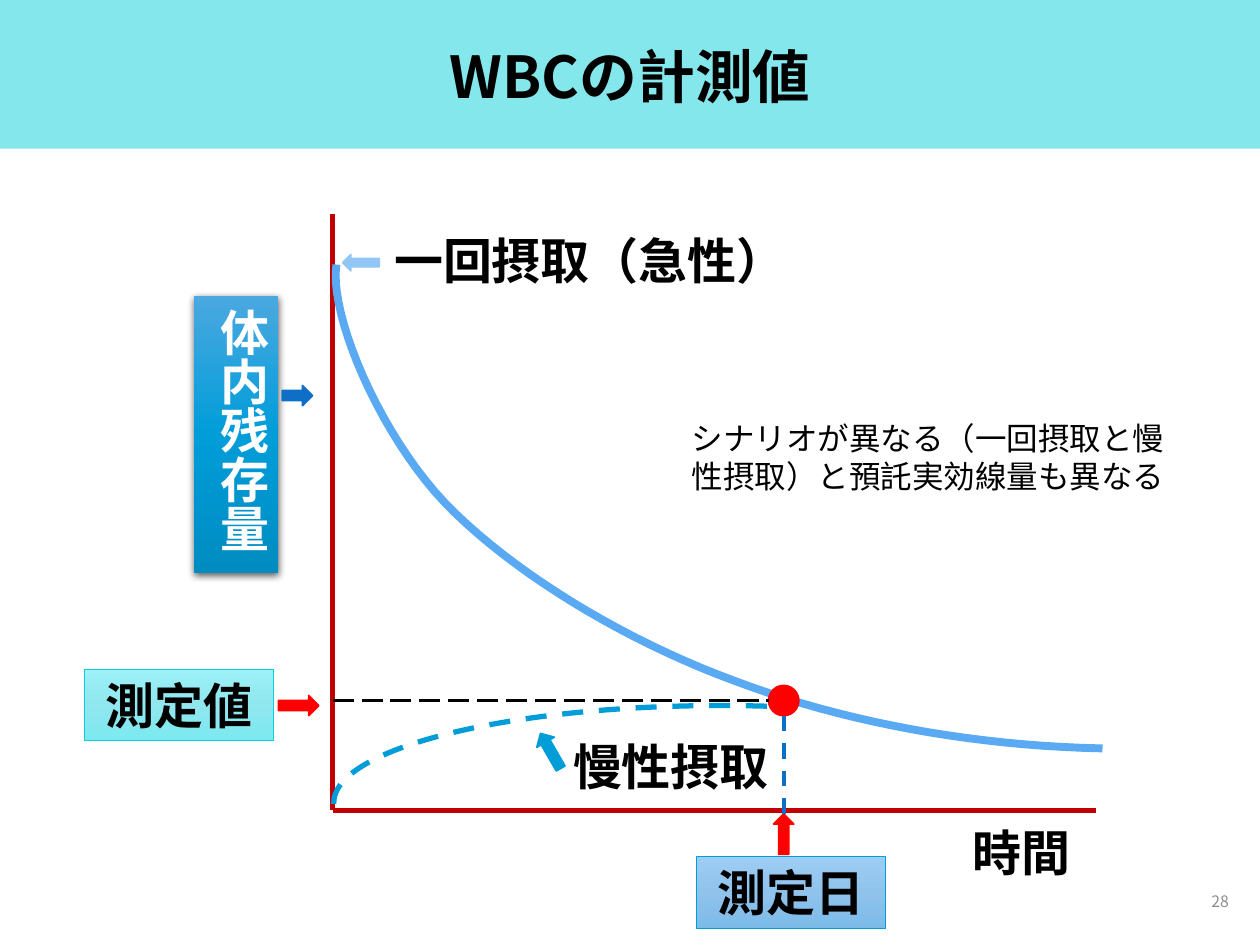
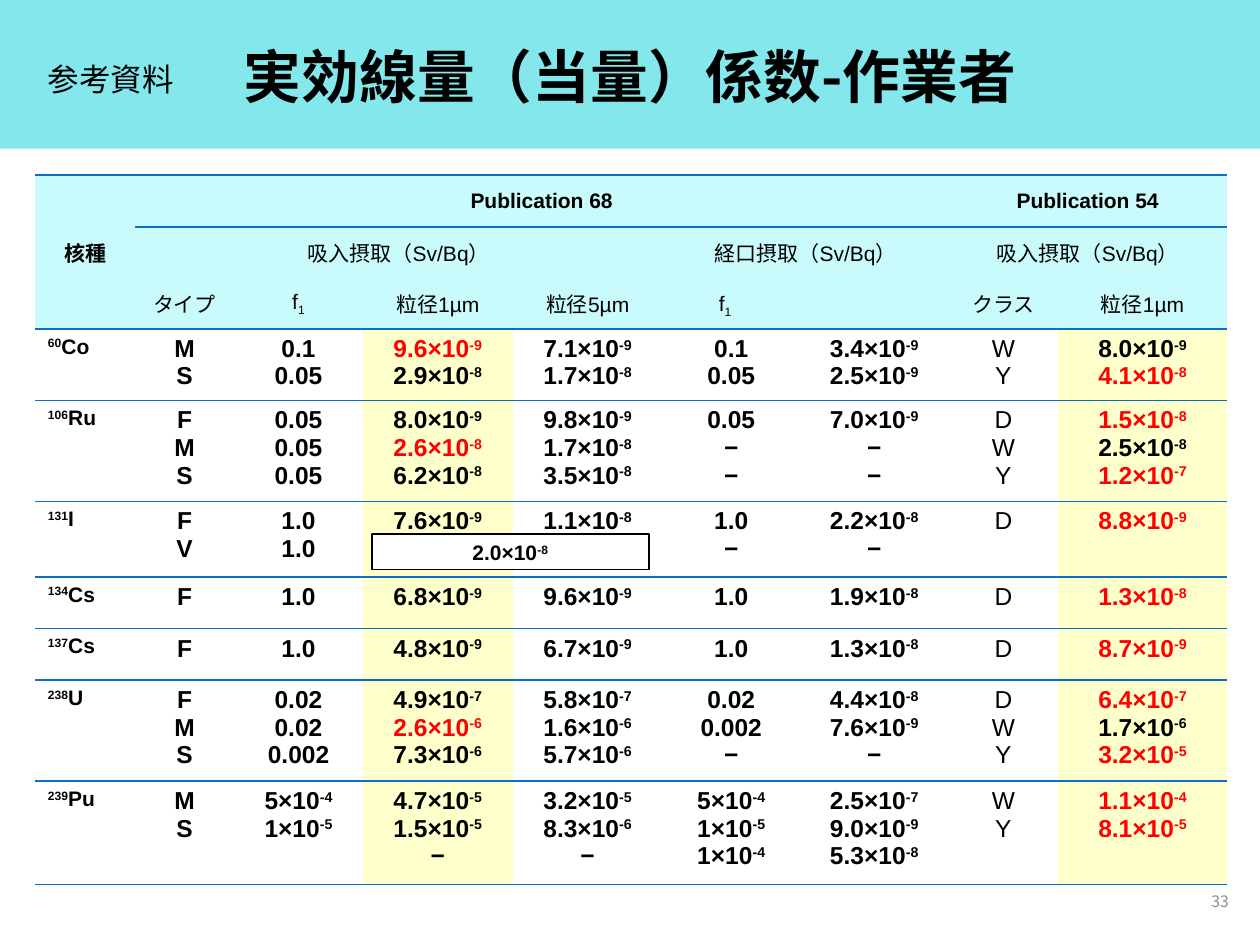
"""Build two slides on whole-body counting: an intake curve and a dose coefficient table."""
from lxml import etree
from pptx import Presentation, util as u
from pptx.dml.color import RGBColor
from pptx.enum import dml, shapes, text
from pptx.oxml import parse_xml
from pptx.oxml.ns import nsdecls, qn

WIDTH, HEIGHT = 10, 7.5
JAPANESE, SERIF, SANS = "Noto Sans CJK JP", "Cambria", "Arial"
BLACK, WHITE, RED, GREY = "000000", "FFFFFF", "FF0000", "8C8C8C"
BLUE, SKY, AXIS, CURVE = "0F6FC6", "009DD9", "C00000", "59AAF2"
BAND, HEADER, YELLOW, PALE = "0BD0D9", "C9FAFC", "FFFFCC", "91C6F7"
LEFT, CENTER, RIGHT = text.PP_ALIGN.LEFT, text.PP_ALIGN.CENTER, text.PP_ALIGN.RIGHT
TOP, MIDDLE = text.MSO_ANCHOR.TOP, text.MSO_ANCHOR.MIDDLE
KIND, DASH = shapes.MSO_SHAPE, dml.MSO_LINE

TITLE_AT = (0.69, 0.21, 8.62, 0.85)
NUMBER_AT = (7.6, 6.95, 2.25, 0.4)

ORIGIN = (2.64, 6.43)
MEASURED = (6.22, 5.56)
AXIS_TOP, AXIS_END = 1.7, 8.7
DOT = 0.24
DECAY = [(2.67, 2.1), (2.61, 2.5), (3.01, 3.44), (3.53, 3.99), (4.06, 4.54),
         (4.95, 5.08), (5.82, 5.4), (6.69, 5.73), (7.72, 5.92), (8.75, 5.94)]
CHRONIC_AT, CHRONIC_ANGLES = (2.65, 5.6, 6.14, 1.54), (107.87, 181.64)

BOXES = [
    ("体内残存量", (1.54, 2.35, 0.67, 2.2), ("4BA8E0", "009DD9", "008CC1"), None, WHITE),
    ("測定値", (0.67, 5.31, 1.5, 0.57), ("9DF1F8", "90E7EE", "7CE9F1"), BAND, BLACK),
    ("測定日", (5.53, 6.8, 1.5, 0.57), ("9DCDF4", "90C3EC", "7CBBE9"), SKY, BLACK),
]
ARROWS = [
    (KIND.RIGHT_ARROW, (2.24, 3.06, 0.24, 0.16), 0, BLUE),
    (KIND.UP_ARROW, (6.14, 6.46, 0.16, 0.32), 0, RED),
    (KIND.UP_ARROW, (2.29, 5.44, 0.16, 0.32), 90, RED),
    (KIND.DOWN_ARROW, (2.8, 1.94, 0.13, 0.29), 90, PALE),
    (KIND.UP_ARROW, (4.29, 5.8, 0.16, 0.32), 330, SKY),
]
LABELS = [
    ("一回摂取（急性）", (3.03, 1.78, 3.39, 0.57), dict(size=28, bold=True)),
    ("慢性摂取", (4.45, 5.8, 1.97, 0.57), dict(size=28, bold=True)),
    ("時間", (7.44, 6.48, 1.34, 0.57), dict(size=28, bold=True, align=CENTER)),
    ("シナリオが異なる（一回摂取と慢性摂取）と預託実効線量も異なる",
     (5.39, 3.28, 4.14, 0.71), dict(size=18)),
]

TABLE_AT = (0.28, 1.39)
COLUMNS = [0.79, 0.79, 1.02, 1.19, 1.19, 1.09, 1.18, 0.87, 1.34]
ROWS = [0.41, 0.41, 0.4, 0.54, 0.75, 0.6, 0.41, 0.41, 0.76, 0.82]
HEADER_ROWS, CLASS_COLUMN, YELLOW_COLUMNS = 3, 7, (3, 8)
HEADINGS = [
    (0, 0, 3, 1, "核種"), (0, 1, 1, 6, "Publication 68"), (0, 7, 1, 2, "Publication 54"),
    (1, 1, 1, 4, "吸入摂取（Sv/Bq）"), (1, 5, 1, 2, "経口摂取（Sv/Bq）"),
    (1, 7, 1, 2, "吸入摂取（Sv/Bq）"),
    (2, 1, 1, 1, "タイプ"), (2, 2, 1, 1, "f|_1"), (2, 3, 1, 1, "粒径1µm"),
    (2, 4, 1, 1, "粒径5µm"), (2, 5, 1, 1, "f|_1　"), (2, 7, 1, 1, "クラス"),
    (2, 8, 1, 1, "粒径1µm"),
]
COEFFICIENTS = [
    ["^60|Co", "M S", "0.1 0.05", "!9.6×10|^-9 2.9×10|^-8", "7.1×10|^-9 1.7×10|^-8",
     "0.1 0.05", "3.4×10|^-9 2.5×10|^-9", "W Y", "8.0×10|^-9 !4.1×10|^-8"],
    ["^106|Ru", "F M S", "0.05 0.05 0.05", "8.0×10|^-9 !2.6×10|^-8 6.2×10|^-8",
     "9.8×10|^-9 1.7×10|^-8 3.5×10|^-8", "0.05 − −", "7.0×10|^-9 − −", "D W Y",
     "!1.5×10|^-8 2.5×10|^-8 !1.2×10|^-7"],
    ["^131|I", "F V", "1.0 1.0", "7.6×10|^-9", "1.1×10|^-8", "1.0 −", "2.2×10|^-8 −",
     "D", "!8.8×10|^-9"],
    ["^134|Cs", "F", "1.0", "6.8×10|^-9", "9.6×10|^-9", "1.0", "1.9×10|^-8", "D",
     "!1.3×10|^-8"],
    ["^137|Cs", "F", "1.0", "4.8×10|^-9", "6.7×10|^-9", "1.0", "1.3×10|^-8", "D",
     "!8.7×10|^-9"],
    ["^238|U", "F M S", "0.02 0.02 0.002", "4.9×10|^-7 !2.6×10|^-6 7.3×10|^-6",
     "5.8×10|^-7 1.6×10|^-6 5.7×10|^-6", "0.02 0.002 −", "4.4×10|^-8 7.6×10|^-9 −",
     "D W Y", "!6.4×10|^-7 1.7×10|^-6 !3.2×10|^-5"],
    ["^239|Pu", "M S", "5×10|^-4 1×10|^-5", "4.7×10|^-5 1.5×10|^-5 −",
     "3.2×10|^-5 8.3×10|^-6 −", "5×10|^-4 1×10|^-5 1×10|^-4",
     "2.5×10|^-7 9.0×10|^-9 5.3×10|^-8", "W Y", "!1.1×10|^-4 !8.1×10|^-5"],
]


def rgb(color):
    return RGBColor.from_string(color)


def inches(values):
    return [u.Inches(value) for value in values]


def write(frame, content, size=12, font=SANS, color=BLACK, bold=False, align=LEFT,
          anchor=TOP, wrap=True, spacing=None):
    frame.word_wrap, frame.vertical_anchor = wrap, anchor
    for index, line in enumerate(content.split("\n")):
        paragraph = frame.add_paragraph() if index else frame.paragraphs[0]
        paragraph.alignment, paragraph.line_spacing = align, spacing
        line_color = RED if line.startswith("!") else color
        for piece in line.lstrip("!").split("|"):
            run = paragraph.add_run()
            run.text = piece.lstrip("^_")
            run.font.size, run.font.bold, run.font.name = u.Pt(size), bold, font
            run.font.color.rgb = rgb(line_color)
            properties = run._r.get_or_add_rPr()
            etree.SubElement(properties, qn("a:ea"), typeface=JAPANESE)
            if piece[0] in "^_":
                properties.set("baseline", "30000" if piece[0] == "^" else "-25000")


def add_text(slide, content, at, **style):
    write(slide.shapes.add_textbox(*inches(at)).text_frame, content, **style)


def set_line(line, color, width=1, dash=None):
    if color is None:
        line.fill.background()
        return
    line.color.rgb, line.width = rgb(color), u.Pt(width)
    if dash:
        line.dash_style = dash


def add_shape(slide, kind, at, fill=None, line=None, width=1, dash=None):
    shape = slide.shapes.add_shape(kind, *inches(at))
    shape.shadow.inherit = False
    if fill:
        shape.fill.solid()
        shape.fill.fore_color.rgb = rgb(fill)
    else:
        shape.fill.background()
    set_line(shape.line, line, width, dash)
    return shape


def add_line(slide, start, end, color, width, dash=None):
    connector = slide.shapes.add_connector(
        shapes.MSO_CONNECTOR.STRAIGHT, *inches(start + end))
    set_line(connector.line, color, width, dash)
    etree.SubElement(connector._element.spPr, qn("a:effectLst"))


def set_gradient(shape, colors):
    stops = "".join(f'<a:gs pos="{index * 50000}"><a:srgbClr val="{color}"/></a:gs>'
                    for index, color in enumerate(colors))
    properties = shape._element.spPr
    properties.replace(properties.find(qn("a:noFill")), parse_xml(
        f'<a:gradFill {nsdecls("a")} rotWithShape="1"><a:gsLst>{stops}</a:gsLst>'
        '<a:lin ang="5400000" scaled="0"/></a:gradFill>'))


def set_shadow(shape):
    shape._element.spPr.find(qn("a:effectLst")).append(parse_xml(
        f'<a:outerShdw {nsdecls("a")} blurRad="57150" dist="19050" dir="5400000" '
        'algn="ctr" rotWithShape="0"><a:srgbClr val="000000">'
        '<a:alpha val="63000"/></a:srgbClr></a:outerShdw>'))


def bezier_points(controls, steps=20):
    points = [controls[0]]
    for first in range(0, len(controls) - 1, 3):
        segment = controls[first:first + 4]
        for step in range(1, steps + 1):
            t = step / steps
            weights = ((1 - t) ** 3, 3 * t * (1 - t) ** 2, 3 * t ** 2 * (1 - t), t ** 3)
            points.append(tuple(sum(w * point[axis] for w, point in zip(weights, segment))
                                for axis in (0, 1)))
    return points


def add_band(slide):
    band = add_shape(slide, KIND.RECTANGLE, (0, 0, WIDTH, 1.18), BAND)
    color = band._element.spPr.find(".//" + qn("a:srgbClr"))
    etree.SubElement(color, qn("a:alpha"), val="50000")
    slide.slide_layout.shapes._spTree.insert(2, band._element)


def add_slide(presentation, title, number):
    slide = presentation.slides.add_slide(presentation.slide_layouts[5])
    if len(presentation.slides) == 1:
        add_band(slide)
    heading = slide.shapes.title
    heading.left, heading.top, heading.width, heading.height = inches(TITLE_AT)
    write(heading.text_frame, title, size=33, font=JAPANESE, bold=True, align=CENTER,
          anchor=MIDDLE, spacing=0.9)
    add_text(slide, number, NUMBER_AT, size=9, font=JAPANESE, color=GREY, align=RIGHT,
             anchor=MIDDLE)
    return slide


def draw_intake_curve(slide):
    for content, at, gradient, outline, color in BOXES:
        box = add_shape(slide, KIND.RECTANGLE, at, line=outline, width=0.5)
        set_gradient(box, gradient)
        write(box.text_frame, content, size=28, font=JAPANESE, color=color, bold=True,
              align=CENTER)
        if at[3] > at[2]:
            box.text_frame._txBody.bodyPr.set("vert", "eaVert")
            set_shadow(box)
    for kind, at, rotation, color in ARROWS:
        add_shape(slide, kind, at, color, color).rotation = rotation
    for content, at, style in LABELS:
        add_text(slide, content, at, font=SERIF, **style)

    add_line(slide, (ORIGIN[0], AXIS_TOP), ORIGIN, AXIS, 3)
    add_line(slide, (AXIS_END, ORIGIN[1]), ORIGIN, AXIS, 3)
    points = [inches(point) for point in bezier_points(DECAY)]
    builder = slide.shapes.build_freeform(*points[0])
    builder.add_line_segments(points[1:], close=False)
    decay = builder.convert_to_shape()
    decay.shadow.inherit = False
    decay.fill.background()
    set_line(decay.line, CURVE, 4.5)
    chronic = add_shape(slide, KIND.ARC, CHRONIC_AT, None, SKY, 3, DASH.DASH)
    chronic.adjustments[0], chronic.adjustments[1] = CHRONIC_ANGLES

    x, y = MEASURED
    add_shape(slide, KIND.OVAL, (x - DOT / 2, y - DOT / 2, DOT, DOT), RED, RED)
    add_line(slide, (ORIGIN[0], y), (x - DOT / 2, y), BLACK, 1.5, DASH.LONG_DASH)
    add_line(slide, (x, y + DOT / 2), (x, 6.46), BLUE, 2.25, DASH.DASH)


def format_cell(cell, fill, ruled):
    properties = cell._tc.get_or_add_tcPr()
    for side in "LRTB":
        border = etree.SubElement(properties, qn("a:ln" + side), w=str(u.Pt(1)))
        if side in ruled:
            solid = etree.SubElement(border, qn("a:solidFill"))
            etree.SubElement(solid, qn("a:srgbClr"), val=BLUE)
        else:
            etree.SubElement(border, qn("a:noFill"))
    if fill:
        cell.fill.solid()
        cell.fill.fore_color.rgb = rgb(fill)
    else:
        cell.fill.background()


def draw_coefficients(slide):
    table = slide.shapes.add_table(len(ROWS), len(COLUMNS), *inches(
        TABLE_AT + (sum(COLUMNS), sum(ROWS)))).table
    table.first_row = table.horz_banding = False
    for column, width in zip(table.columns, COLUMNS):
        column.width = u.Inches(width)
    for row, height in zip(table.rows, ROWS):
        row.height = u.Inches(height)
    for row in range(len(ROWS)):
        for column in range(len(COLUMNS)):
            if row < HEADER_ROWS:
                fill = HEADER
                ruled = ("T" if row == 0 or row == 1 and column else "") + (
                    "B" if row == 2 or row == 0 and column else "")
            else:
                fill, ruled = YELLOW if column in YELLOW_COLUMNS else None, "TB"
            format_cell(table.cell(row, column), fill, ruled)
    for row, column, height, width, content in HEADINGS:
        cell = table.cell(row, column)
        if height * width > 1:
            cell.merge(table.cell(row + height - 1, column + width - 1))
        cell.vertical_anchor = MIDDLE
        write(cell.text_frame, content, bold=row == 0, align=CENTER)
    for row, values in enumerate(COEFFICIENTS, HEADER_ROWS):
        for column, value in enumerate(values):
            write(table.cell(row, column).text_frame, "\n".join(value.split()),
                  size=14 if column else 12, bold=column != CLASS_COLUMN,
                  align=CENTER if column else LEFT)
    vapour = add_shape(slide, KIND.RECTANGLE, (2.95, 4.24, 2.2, 0.28), WHITE, BLACK)
    write(vapour.text_frame, "2.0×10|^-8", bold=True, align=CENTER, anchor=MIDDLE)
    add_text(slide, "参考資料", (0.28, 0.43, 1.21, 0.4), size=18, font=JAPANESE, wrap=False)


def main():
    presentation = Presentation()
    presentation.slide_width, presentation.slide_height = inches((WIDTH, HEIGHT))
    draw_intake_curve(add_slide(presentation, "WBCの計測値", "28"))
    draw_coefficients(add_slide(presentation, "実効線量（当量）係数-作業者", "33"))
    presentation.save("out.pptx")


if __name__ == "__main__":
    main()
